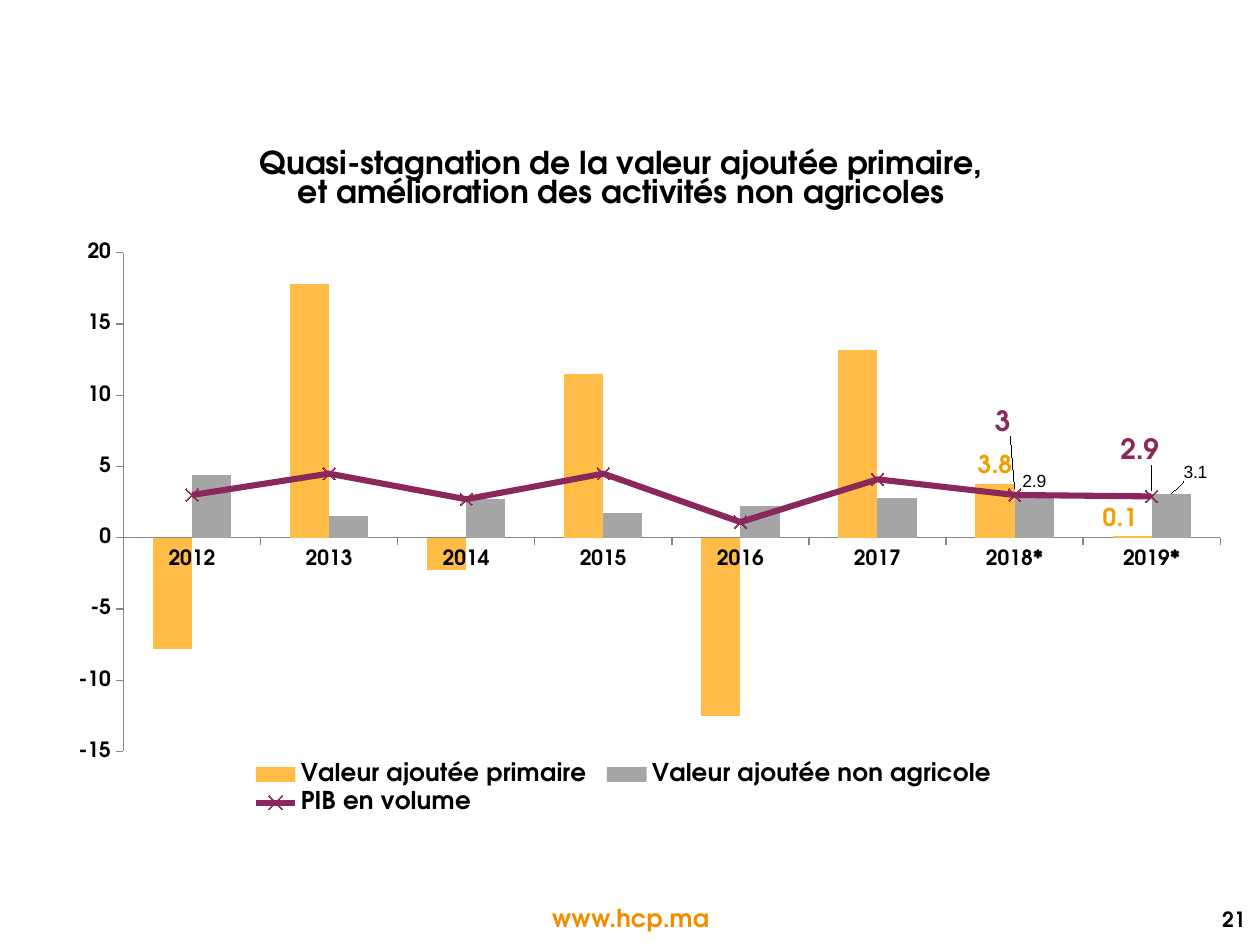
from dataclasses import dataclass

from lxml import etree
from pptx import Presentation
from pptx import util as u
from pptx.chart.data import CategoryChartData
from pptx.dml.color import RGBColor
from pptx.enum import chart as ch
from pptx.enum import text
from pptx.oxml import parse_xml
from pptx.oxml.ns import nsdecls, qn

PX_PER_INCH = 126


@dataclass(frozen=True)
class Theme:
    font: str = "TeX Gyre Adventor"
    plain_font: str = "Liberation Sans"
    ink: str = "000000"
    axis: str = "868686"
    link: str = "F18E00"
    primary: str = "FFBD47"
    primary_label: str = "F49D00"
    other: str = "A5A5A5"
    gdp: str = "8A285B"
    title: int = 18
    gdp_label: int = 16
    body: int = 14
    small: int = 12
    tiny: int = 10


def px(n):
    return u.Emu(round(n * 914400 / PX_PER_INCH))


def set_layout(parent, after, **values):
    """Give a chart part a manual layout, placed after the named child."""
    for old in parent.findall(qn("c:layout")):
        parent.remove(old)
    parts = "".join(f'<c:{name} val="{value}"/>' for name, value in values.items())
    layout = parse_xml(f"<c:layout {nsdecls('c')}><c:manualLayout>{parts}"
                       "</c:manualLayout></c:layout>")
    anchor = parent.find(qn(after)) if after else None
    if anchor is None:
        parent.insert(0, layout)
    else:
        anchor.addnext(layout)


def move_to_line_plot(chart, index):
    """Move one column series to a line plot on the same axes."""
    bars = chart.plots[0]
    series = bars.series[index]._element
    bar_chart = series.getparent()
    line_chart = parse_xml(f'<c:lineChart {nsdecls("c")}><c:grouping val="standard"/>'
                           '<c:varyColors val="0"/><c:marker val="1"/></c:lineChart>')
    for invert in series.findall(qn("c:invertIfNegative")):
        series.remove(invert)
    line_chart.insert(2, series)
    for axis in bar_chart.findall(qn("c:axId")):
        etree.SubElement(line_chart, qn("c:axId")).set("val", axis.get("val"))
    bar_chart.addnext(line_chart)
    return chart.plots[1].series[0]


class Deck:
    def __init__(self, theme):
        self.theme = theme
        self.prs = Presentation()
        self.prs.slide_width, self.prs.slide_height = px(1260), px(945)
        self.slide = self.prs.slides.add_slide(self.prs.slide_layouts[6])

    def style(self, font, size, color, bold=True, name=None):
        font.name, font.size, font.bold = name or self.theme.font, u.Pt(size), bold
        font.color.rgb = RGBColor.from_string(color)

    def paint(self, fill, color):
        fill.solid()
        fill.fore_color.rgb = RGBColor.from_string(color)

    def label(self, words, box, size, color, align):
        frame = self.slide.shapes.add_textbox(*map(px, box)).text_frame
        frame.word_wrap = True
        frame.vertical_anchor = text.MSO_ANCHOR.MIDDLE
        paragraph = frame.paragraphs[0]
        paragraph.alignment = align
        run = paragraph.add_run()
        run.text = words
        self.style(run.font, size, color)

    def chart(self, box, categories, values):
        data = CategoryChartData()
        data.categories = categories
        for name, numbers in values.items():
            data.add_series(name, numbers)
        chart = self.slide.shapes.add_chart(
            ch.XL_CHART_TYPE.COLUMN_CLUSTERED, *map(px, box), data).chart
        self.style(chart.font, self.theme.title, self.theme.ink, False)
        chart.plots[0].gap_width, chart.plots[0].overlap = 150, 0
        chart.plots[0].vary_by_categories = False
        set_layout(chart._chartSpace.chart.plotArea, None, layoutTarget="inner",
                   xMode="edge", yMode="edge", x=0.09, y=0.16, w=0.91, h=0.74)
        return chart

    def chart_title(self, chart, lines):
        frame = chart.chart_title.text_frame
        paragraph = frame.paragraphs[0]
        paragraph.line_spacing = 0.8
        for i, words in enumerate(lines):
            if i:
                paragraph.add_line_break()
            run = paragraph.add_run()
            run.text = words
            self.style(run.font, self.theme.title, self.theme.ink)
        chart.chart_title.include_in_layout = False
        set_layout(chart.chart_title._element, "c:tx",
                   xMode="edge", yMode="edge", x=0.2, y=0)

    def legend(self, chart):
        chart.has_legend = True
        chart.legend.position = ch.XL_LEGEND_POSITION.BOTTOM
        chart.legend.include_in_layout = False
        self.style(chart.legend.font, self.theme.body, self.theme.ink)
        set_layout(chart.legend._element, "c:legendPos", xMode="edge", yMode="edge",
                   x=0.19, y=0.91, w=0.63, h=0.09)

    def axis(self, axis):
        axis.has_major_gridlines = False
        axis.major_tick_mark = ch.XL_TICK_MARK.OUTSIDE
        axis.minor_tick_mark = ch.XL_TICK_MARK.NONE
        axis.format.line.width = u.Pt(0.75)
        self.paint(axis.format.line.fill, self.theme.axis)
        self.style(axis.tick_labels.font, self.theme.small, self.theme.ink)

    def columns(self, series, color):
        series.invert_if_negative = False
        self.paint(series.format.fill, color)

    def line(self, series, color):
        series.smooth = False
        series.format.line.width = u.Pt(3.5)
        self.paint(series.format.line.fill, color)
        series.marker.style, series.marker.size = ch.XL_MARKER_STYLE.X, 7
        series.marker.format.fill.background()
        self.paint(series.marker.format.line.fill, color)

    def point_labels(self, series, position, offsets, **style):
        """Show values only at the given points, each shifted by (x, y)."""
        series.data_labels.show_value = False
        for index, (x, y) in offsets.items():
            label = series.points[index].data_label
            self.style(label.font, **style)
            label.position = position
            if x or y:
                set_layout(label._get_or_add_dLbl(), "c:idx", x=x, y=y)


def main():
    theme = Theme()
    deck = Deck(theme)
    deck.label("www.hcp.ma", (482, 897, 297, 42), theme.body, theme.link,
               text.PP_ALIGN.CENTER)
    deck.label("21", (1066, 897, 192, 44), theme.small, theme.ink, text.PP_ALIGN.RIGHT)

    years = ["2012", "2013", "2014", "2015", "2016", "2017", "2018*", "2019*"]
    growth = {
        "Valeur ajoutée primaire": (-7.8, 17.8, -2.3, 11.5, -12.5, 13.2, 3.8, 0.1),
        "Valeur ajoutée non agricole": (4.4, 1.5, 2.7, 1.7, 2.2, 2.8, 2.9, 3.1),
        "PIB en volume": (3, 4.5, 2.7, 4.5, 1.1, 4.1, 3, 2.9),
    }
    chart = deck.chart((15, 145, 1206, 674), years, growth)
    deck.chart_title(chart, ["Quasi-stagnation de la valeur ajoutée primaire,",
                             "et amélioration des activités non agricoles"])
    deck.legend(chart)
    deck.axis(chart.category_axis)
    deck.axis(chart.value_axis)
    scale = chart.value_axis
    scale.minimum_scale, scale.maximum_scale, scale.major_unit = -15, 20, 5
    scale.tick_labels.number_format = "0"
    scale.tick_labels.number_format_is_linked = False

    gdp = move_to_line_plot(chart, 2)
    primary, other = chart.plots[0].series
    deck.columns(primary, theme.primary)
    deck.columns(other, theme.other)
    deck.line(gdp, theme.gdp)

    place = ch.XL_LABEL_POSITION
    deck.point_labels(primary, place.OUTSIDE_END, {6: (0, 0), 7: (-0.01, 0)},
                      size=theme.body, color=theme.primary_label)
    deck.point_labels(other, place.OUTSIDE_END, {6: (0, 0), 7: (0.02, -0.01)},
                      size=theme.tiny, color=theme.ink, bold=False, name=theme.plain_font)
    deck.point_labels(gdp, place.ABOVE, {6: (-0.01, -0.07), 7: (-0.01, -0.03)},
                      size=theme.gdp_label, color=theme.gdp)
    deck.prs.save("out.pptx")


if __name__ == "__main__":
    main()
